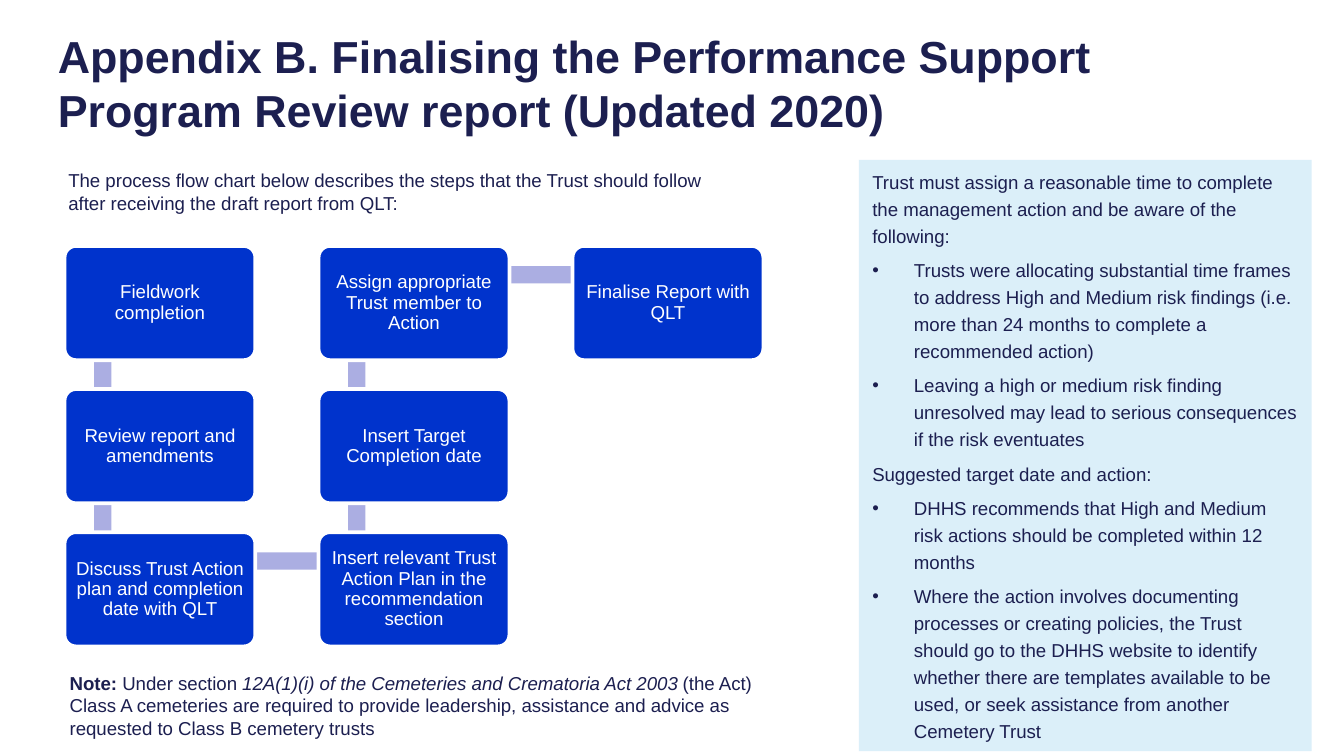
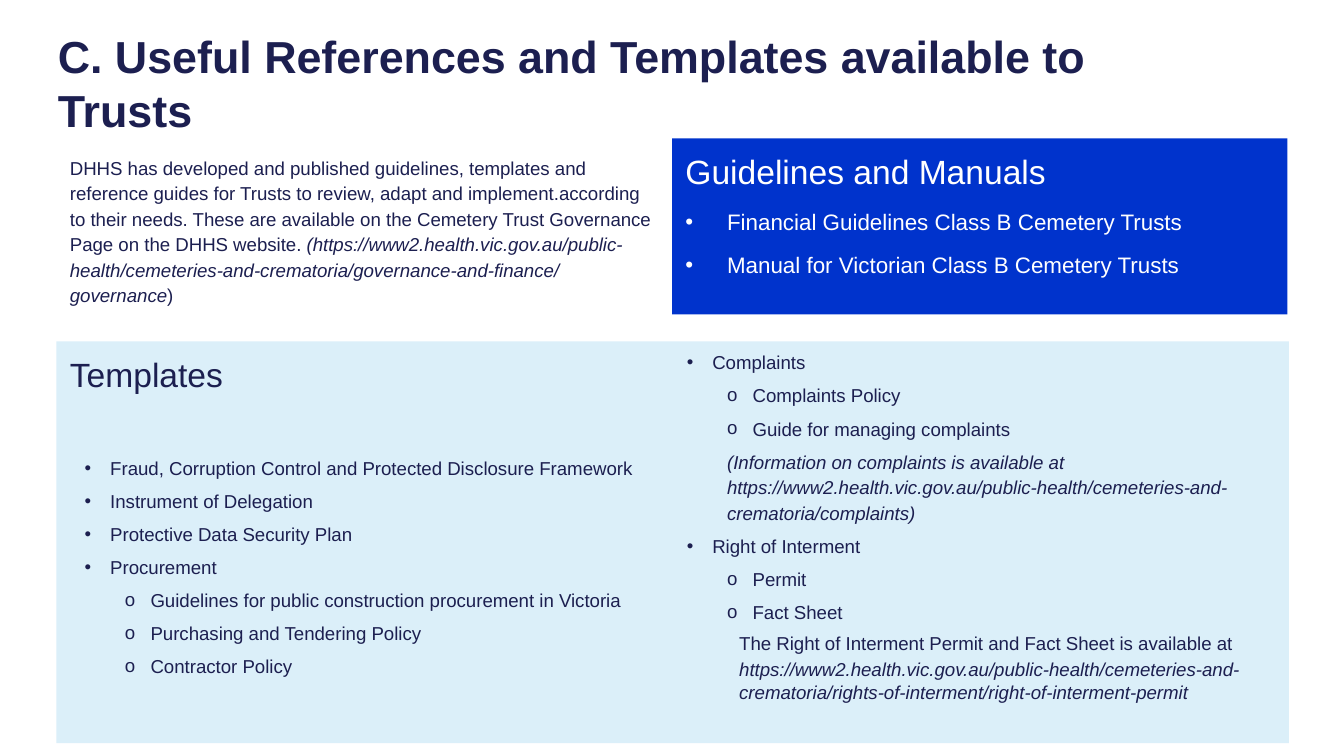
from dataclasses import dataclass, replace

from lxml import etree
from pptx import Presentation
from pptx.dml.color import RGBColor
from pptx.enum.shapes import MSO_SHAPE
from pptx.enum.text import MSO_ANCHOR, MSO_AUTO_SIZE, PP_ALIGN
from pptx.oxml.ns import qn
from pptx.shapes.base import BaseShape
from pptx.slide import Slide
from pptx.util import Inches, Pt

NAVY = RGBColor(0x1C, 0x1F, 0x50)
BLUE = RGBColor(0x00, 0x33, 0xCC)
LILAC = RGBColor(0xAB, 0xAE, 0xE2)
PALE = RGBColor(0xDB, 0xEF, 0xF9)
WHITE = RGBColor(0xFF, 0xFF, 0xFF)
FONT = "Arial"

LEFT, CENTER = PP_ALIGN.LEFT, PP_ALIGN.CENTER
TOP, MIDDLE = MSO_ANCHOR.TOP, MSO_ANCHOR.MIDDLE
NO_FIT = MSO_AUTO_SIZE.NONE
RECT, ROUND = MSO_SHAPE.RECTANGLE, MSO_SHAPE.ROUNDED_RECTANGLE

WIDTH = 10
HEIGHT = WIDTH * 9 / 16
LIST, COMPARE = 1, 4  # layouts of the default template
SITE = "https://www2.health.vic.gov.au/public-health/cemeteries-and-crematoria/"


@dataclass(frozen=True)
class Box:
    left: float
    top: float
    width: float
    height: float


@dataclass(frozen=True)
class Run:
    text: str
    bold: bool = False
    italic: bool = False


@dataclass(frozen=True)
class Para:
    runs: tuple[Run, ...]
    size: float = 10
    level: int = 0
    margin: float = 0
    hang: float = 0
    bullet: str = ""
    lines: float = 1
    before: float = 0
    after: float = 0
    align: PP_ALIGN = LEFT


@dataclass(frozen=True)
class Step:
    text: str
    col: int
    row: int


def plain(text: str, **style) -> Para:
    return Para((Run(text),), **style)


def guide(text: str) -> Para:
    """Bulleted line with a wide hanging indent in the advice panel."""
    return plain(text, margin=0.31, hang=0.31, bullet="•",
                 lines=1.2, before=2, after=2)


def item(text: str) -> Para:
    return plain(text, margin=0.3, hang=0.19, bullet="•",
                 lines=1.14, before=2, after=2)


def sub(text: str) -> Para:
    return plain(text, level=1, margin=0.6, hang=0.19, bullet="o",
                 lines=1.14, before=2, after=2)


def manual(text: str) -> Para:
    return plain(text, size=12, margin=0.31, hang=0.31, bullet="•",
                 lines=1.14, before=6, after=1)


def place(shape: BaseShape, box: Box) -> None:
    shape.left, shape.top = Inches(box.left), Inches(box.top)
    shape.width, shape.height = Inches(box.width), Inches(box.height)


def write(shape: BaseShape, paras: list[Para], color: RGBColor = NAVY,
          anchor: MSO_ANCHOR = TOP) -> None:
    frame = shape.text_frame
    frame.word_wrap = True
    frame.auto_size = NO_FIT
    frame.vertical_anchor = anchor
    for i, para in enumerate(paras):
        line = frame.paragraphs[0] if i == 0 else frame.add_paragraph()
        line.level = para.level
        props = line._p.get_or_add_pPr()
        props.set("marL", str(Inches(para.margin)))
        props.set("indent", str(-Inches(para.hang)))
        if para.bullet:
            mark = etree.SubElement(props, qn("a:buChar"))
            mark.set("char", para.bullet)
        else:
            etree.SubElement(props, qn("a:buNone"))
        line.alignment = para.align
        line.line_spacing = para.lines
        line.space_before = Pt(para.before)
        line.space_after = Pt(para.after)
        for part in para.runs:
            run = line.add_run()
            run.text = part.text
            font = run.font
            font.name, font.size = FONT, Pt(para.size)
            font.bold, font.italic = part.bold, part.italic
            font.color.rgb = color


def paint(shape: BaseShape, color: RGBColor) -> None:
    shape.fill.solid()
    shape.fill.fore_color.rgb = color


def add_block(slide: Slide, kind: MSO_SHAPE, box: Box,
              color: RGBColor) -> BaseShape:
    shape = slide.shapes.add_shape(
        kind, Inches(box.left), Inches(box.top),
        Inches(box.width), Inches(box.height))
    shape.shadow.inherit = False
    paint(shape, color)
    shape.line.fill.background()
    return shape


def add_note(slide: Slide, box: Box, para: Para) -> None:
    note = slide.shapes.add_textbox(
        Inches(box.left), Inches(box.top),
        Inches(box.width), Inches(box.height))
    write(note, [para])


def fill_body(slide: Slide, index: int, box: Box, paras: list[Para],
              color: RGBColor = NAVY) -> BaseShape:
    body = slide.placeholders[index]
    place(body, box)
    write(body, paras, color)
    return body


def start(deck: Presentation, layout: int, title: str) -> Slide:
    """Add a slide with the shared title style."""
    slide = deck.slides.add_slide(deck.slide_layouts[layout])
    head = slide.shapes.title
    place(head, Box(0.33, 0.29, 8.19, 0.65))
    write(head, [Para((Run(title, bold=True),), size=24, after=2)],
          anchor=MIDDLE)
    return slide


STEPS = [
    Step("Fieldwork completion", 0, 0),
    Step("Review report and amendments", 0, 1),
    Step("Discuss Trust Action plan and completion date with QLT", 0, 2),
    Step("Insert relevant Trust Action Plan in the recommendation section",
         1, 2),
    Step("Insert Target Completion date", 1, 1),
    Step("Assign appropriate Trust member to Action", 1, 0),
    Step("Finalise Report with QLT", 2, 0),
]
STEP_W, STEP_H = 1.42, 0.85
COL_GAP, ROW_GAP = 1.89, 1.065
BAR = 0.13


def corner(step: Step) -> tuple[float, float]:
    return 0.48 + step.col * COL_GAP, 1.83 + step.row * ROW_GAP


def draw_flow(slide: Slide) -> None:
    for one, two in zip(STEPS, STEPS[1:]):
        left, top = map(min, corner(one), corner(two))
        if one.row == two.row:
            bar = Box(left + 0.29, top + 0.15, COL_GAP, BAR)
        else:
            bar = Box(left + 0.22, top + 0.21, BAR, ROW_GAP)
        add_block(slide, RECT, bar, LILAC)
    for step in STEPS:
        card = add_block(slide, ROUND, Box(*corner(step), STEP_W, STEP_H),
                         BLUE)
        card.adjustments[0] = 0.1
        card.line.color.rgb = WHITE
        card.line.width = Pt(2)
        frame = card.text_frame
        frame.margin_left = frame.margin_right = Inches(0.06)
        frame.margin_top = frame.margin_bottom = Inches(0.06)
        write(card, [plain(step.text, lines=0.9, align=CENTER)],
              WHITE, MIDDLE)


def build_report(deck: Presentation) -> None:
    slide = start(deck, LIST, "Appendix B. Finalising the Performance "
                  "Support Program Review report (Updated 2020)")
    draw_flow(slide)
    add_note(slide, Box(0.41, 1.21, 5, 0.44), plain(
        "The process flow chart below describes the steps that the Trust "
        "should follow after receiving the draft report from QLT:"))
    advice = fill_body(slide, 1, Box(6.39, 1.19, 3.37, 4.4), [
        plain("Trust must assign a reasonable time to complete the "
              "management action and be aware of the following:",
              lines=1.2, after=2),
        guide("Trusts were allocating substantial time frames to address "
              "High and Medium risk findings (i.e. more than 24 months to "
              "complete a recommended action)"),
        guide("Leaving a high or medium risk finding unresolved may lead to "
              "serious consequences if the risk eventuates"),
        plain("Suggested target date and action:",
              lines=1.2, before=2, after=2),
        guide("DHHS recommends that High and Medium risk actions should be "
              "completed within 12 months"),
        guide("Where the action involves documenting processes or creating "
              "policies, the Trust should go to the DHHS website to identify "
              "whether there are templates available to be used, or seek "
              "assistance from another Cemetery Trust"),
    ])
    paint(advice, PALE)
    add_note(slide, Box(0.42, 4.95, 5.56, 0.77), Para((
        Run("Note:", bold=True),
        Run(" Under section "),
        Run("12A(1)(i) of the Cemeteries and Crematoria Act 2003",
            italic=True),
        Run(" (the Act) Class A cemeteries are required to provide "
            "leadership, assistance and advice as requested to Class B "
            "cemetery trusts"),
    )))


def build_links(deck: Presentation) -> None:
    slide = start(deck, COMPARE,
                  "C. Useful References and Templates available to Trusts")
    fill_body(slide, 1, Box(0.42, 1.09, 4.58, 1.31), [Para((
        Run("DHHS has developed and published guidelines, templates and "
            "reference guides for Trusts to review, adapt and "
            "implement.according to their needs. These are available on the "
            "Cemetery Trust Governance Page on the DHHS website. "),
        Run(f"({SITE}governance-and-finance/governance", italic=True),
        Run(")"),
    ), lines=1.14, after=1)])
    guides = fill_body(slide, 2, Box(5, 1.03, 4.58, 1.31), [
        plain("Guidelines and Manuals", size=18, lines=1.14, after=1),
        manual("Financial Guidelines Class B Cemetery Trusts"),
        manual("Manual for Victorian Class B Cemetery Trusts"),
    ], WHITE)
    paint(guides, BLUE)
    panel = fill_body(slide, 3, Box(0.42, 2.54, 9.17, 2.99), [
        plain("Templates", size=18, lines=1.14, after=30),
        item("Fraud, Corruption Control and Protected Disclosure Framework"),
        item("Instrument of Delegation"),
        item("Protective Data Security Plan"),
        item("Procurement"),
        sub("Guidelines for public construction procurement in Victoria"),
        sub("Purchasing and Tendering Policy"),
        sub("Contractor Policy"),
    ])
    paint(panel, PALE)
    panel.text_frame.margin_right = Inches(4.59)
    fill_body(slide, 4, Box(4.9, 2.54, 4.69, 2.99), [
        replace(item("Complaints"), before=0),
        sub("Complaints Policy"),
        sub("Guide for managing complaints"),
        Para((Run("(Information on complaints is available at "
                  f"{SITE}complaints)", italic=True),),
             level=1, margin=0.41, lines=1.14, before=2, after=2),
        item("Right of Interment"),
        sub("Permit"),
        sub("Fact Sheet"),
        plain("The Right of Interment Permit and Fact Sheet is available at",
              level=2, margin=0.5, lines=1.14, before=1, after=2),
        Para((Run(f"{SITE}rights-of-interment/right-of-interment-permit",
                  italic=True),), level=2, margin=0.5),
    ])


def main() -> None:
    deck = Presentation()
    deck.slide_width, deck.slide_height = Inches(WIDTH), Inches(HEIGHT)
    build_report(deck)
    build_links(deck)
    deck.save("out.pptx")


if __name__ == "__main__":
    main()
